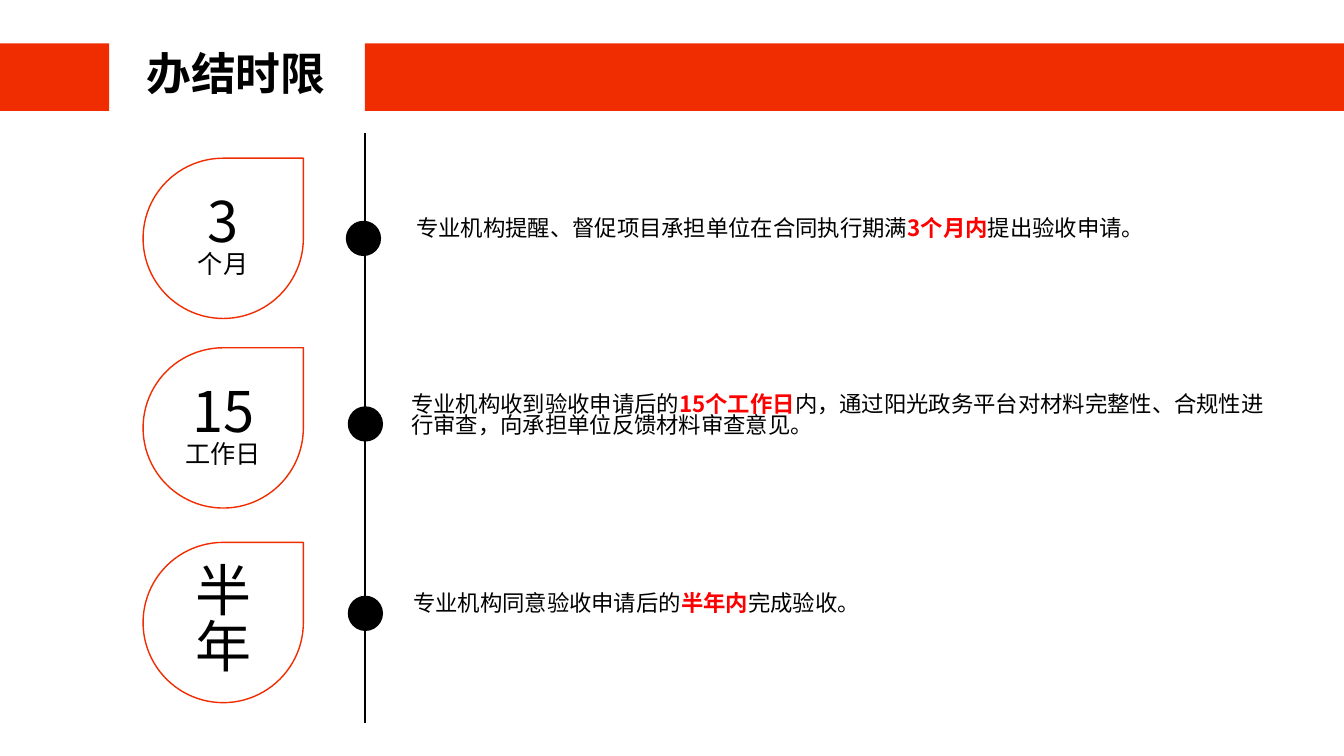
from pptx import Presentation, util as u
from pptx.dml.color import RGBColor
from pptx.enum import shapes, text
from lxml import etree

Pt = u.Pt
RED = RGBColor(0xF0, 0x2D, 0x01)
MARK = RGBColor(0xFF, 0, 0)
BLACK = RGBColor(0, 0, 0)
FACE = "Noto Sans CJK SC"
NS = "{http://schemas.openxmlformats.org/drawingml/2006/main}"
KIND = shapes.MSO_SHAPE

deck = Presentation()
deck.slide_width, deck.slide_height = Pt(960), Pt(540)
slide = deck.slides.add_slide(deck.slide_layouts[6])


def draw(kind, box, fill=None, line=None):
    shape = slide.shapes.add_shape(kind, *map(Pt, box))
    shape.shadow.inherit = False
    if fill is None:
        shape.fill.background()
    else:
        shape.fill.solid()
        shape.fill.fore_color.rgb = fill
    if line is None:
        shape.line.fill.background()
    else:
        shape.line.color.rgb = line
        shape.line.width = Pt(1)
    return shape


def write(shape, rows, align, space):
    frame = shape.text_frame
    frame.word_wrap = True
    for i, row in enumerate(rows):
        para = frame.paragraphs[0] if i == 0 else frame.add_paragraph()
        para.alignment = align
        para.line_spacing = space
        for words, size, color, bold in row:
            run = para.add_run()
            run.text = words
            look = {"name": FACE, "size": Pt(size), "bold": bold}
            for key, value in look.items():
                setattr(run.font, key, value)
            run.font.color.rgb = color
            etree.SubElement(run.font._element, NS + "ea", typeface=FACE)


MID, LEFT = text.PP_ALIGN.CENTER, text.PP_ALIGN.LEFT

for x, width in [(0, 78), (260.6, 699.4)]:
    draw(KIND.RECTANGLE, (x, 31, width, 48.2), fill=RED)
title = slide.shapes.add_textbox(Pt(64.8), Pt(33.1), Pt(207.4), Pt(46))
write(title, [[("办结时限", 32, BLACK, True)]], MID, 0.9)

axis = slide.shapes.add_connector(
    shapes.MSO_CONNECTOR.STRAIGHT, Pt(260.6), Pt(95), Pt(260.6), Pt(516.2))
axis.line.color.rgb = BLACK
axis.line.width = Pt(1)
etree.SubElement(axis._element.spPr, NS + "effectLst")

steps = [
    (113, 247, 157.7, 290.2, 153.4, ["3", "个月"],
     ["专业机构提醒、督促项目承担单位在合同执行期满", "3个月内", "提出验收申请。"]),
    (248.4, 248.4, 290.2, 286.6, 278.6, ["15", "工作日"],
     ["专业机构收到验收申请后的", "15个工作日",
      "内，通过阳光政务平台对材料完整性、合规性进行审查，向承担单位反馈材料审查意见。"]),
    (387.4, 248.4, 425.5, 288, 421.2, ["半年"],
     ["专业机构同意验收申请后的", "半年内", "完成验收。"]),
]
for top, dot_x, dot_y, x, y, term, parts in steps:
    drop = draw(KIND.TEAR, (102.2, top, 114.5, 114.5), line=RED)
    drop.text_frame.vertical_anchor = text.MSO_ANCHOR.MIDDLE
    write(drop, [[(words, size, BLACK, False)]
                 for words, size in zip(term, (40, 18))], MID, 0.83)
    draw(KIND.OVAL, (dot_x, dot_y, 25.2, 25.2), fill=BLACK)
    note = slide.shapes.add_textbox(Pt(x), Pt(y), Pt(627.1), Pt(46))
    write(note, [[(words, 16, color, bold) for words, color, bold in
                  zip(parts, (BLACK, MARK, BLACK), (False, True, False))]], LEFT, 0.8)

deck.save("out.pptx")
